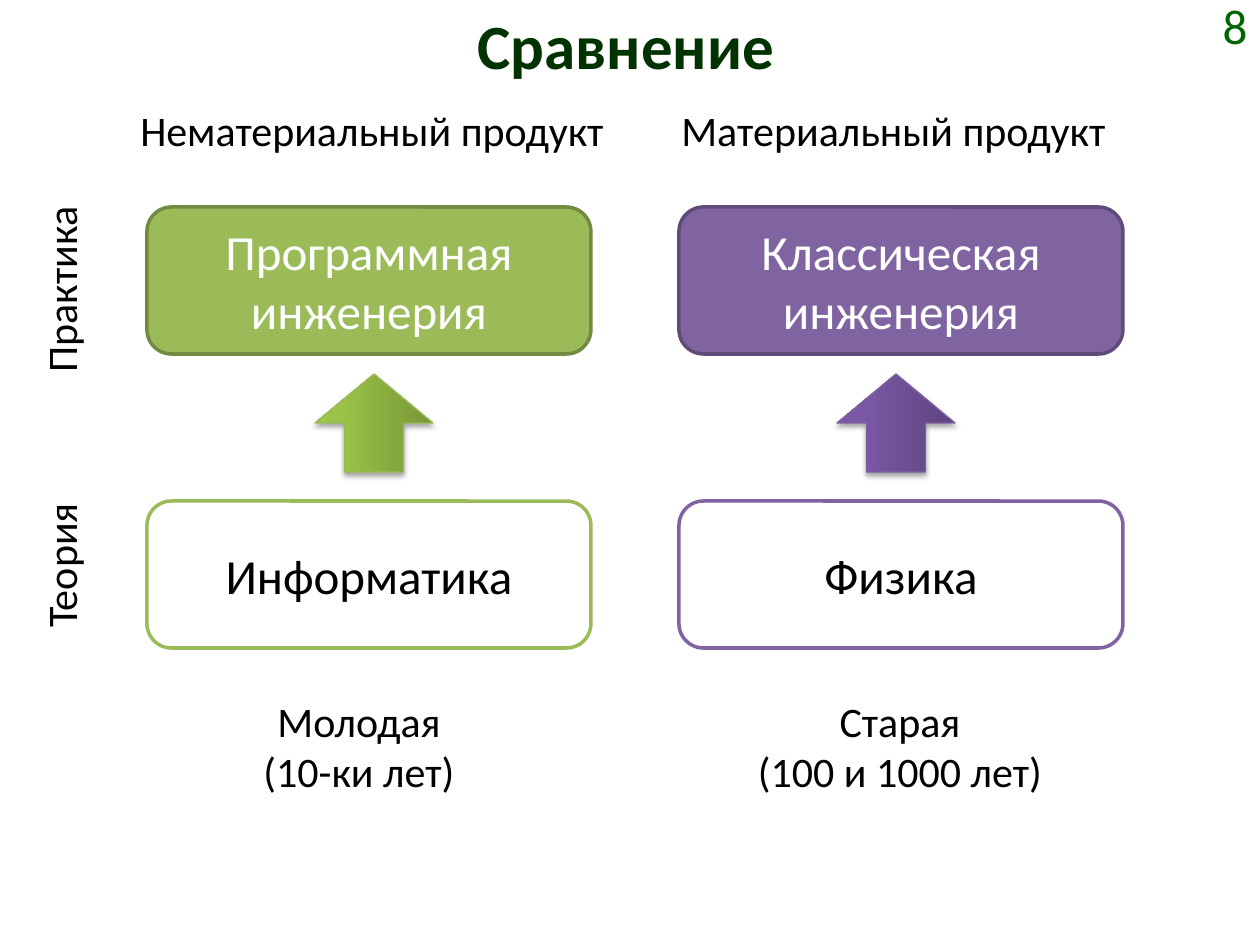
"""Builds a slide comparing software engineering with classical engineering."""
from lxml.etree import SubElement
from pptx import Presentation
from pptx.dml.color import RGBColor
from pptx.enum.shapes import MSO_SHAPE as SHAPE
from pptx.enum.text import MSO_ANCHOR as ANCHOR, MSO_AUTO_SIZE as AUTO, PP_ALIGN as ALIGN
from pptx.oxml.ns import qn
from pptx.util import Emu, Pt

TITLE, NUMBER = "Сравнение", "8"
COLORS = {"title": "003300", "number": "006600", "black": "000000", "white": "FFFFFF"}
COLUMNS = [
    {"header": "Нематериальный продукт", "header_w": 494,
     "practice": "Программная инженерия", "theory": "Информатика",
     "age": "Молодая\n(10-ки лет)", "text_x": 128, "box_x": 147, "arrow_x": 325,
     "fill": "9BBB59", "edge": "738A42", "arrow_edge": "98B955",
     "stops": [(0, "779737"), (80, "9BC348"), (100, "9DC746")]},
    {"header": "Материальный продукт", "header_w": 454,
     "practice": "Классическая инженерия", "theory": "Физика",
     "age": "Старая\n(100 и 1000 лет)", "text_x": 669, "box_x": 679, "arrow_x": 847,
     "fill": "8064A2", "edge": "5F4A78", "arrow_edge": "7D60A0",
     "stops": [(0, "5F4480"), (80, "7B58A6"), (100, "7C57A8")]},
]
ROWS = [("Практика", 186), ("Теория", 462)]
PRACTICE_Y, THEORY_Y, BOX_W, BOX_H = 207, 501, 444, 147


def px(*lengths):
    return [Emu(round(n * 914400 / 126)) for n in lengths]


def rgb(color):
    return RGBColor.from_string(color)


def write(tf, text, size=24, color=COLORS["black"], bold=False, align=ALIGN.CENTER,
          anchor=ANCHOR.TOP, before=0, wrap=True, auto=AUTO.NONE, inset=None):
    tf.word_wrap, tf.auto_size, tf.vertical_anchor = wrap, auto, anchor
    if inset is not None:
        tf.margin_left = tf.margin_top = tf.margin_right = tf.margin_bottom = inset
    p = tf.paragraphs[0]
    p.text, p.alignment, p.space_before = text, align, Pt(before)
    for r in p.runs:
        r.font.name, r.font.size, r.font.bold = "Calibri", Pt(size), bold
        r.font.color.rgb = rgb(color)


def add_label(s, box, text, vertical=False, **fmt):
    tf = s.shapes.add_textbox(*px(*box)).text_frame
    write(tf, text, **fmt)
    if vertical:
        tf._txBody.bodyPr.set("vert", "vert270")


def add_box(s, x, y, text, fill, edge, color):
    sp = s.shapes.add_shape(SHAPE.ROUNDED_RECTANGLE, *px(x, y, BOX_W, BOX_H))
    sp.shadow.inherit = False
    sp.fill.solid()
    sp.fill.fore_color.rgb = rgb(fill)
    sp.line.color.rgb, sp.line.width = rgb(edge), Pt(2)
    write(sp.text_frame, text, size=28, color=color, anchor=ANCHOR.MIDDLE, inset=0)


def add_arrow(s, x, stops, edge):
    sp = s.shapes.add_shape(SHAPE.RIGHT_ARROW, *px(x, 364, 98, 118))
    sp.rotation = 270
    sp.line.color.rgb, sp.line.width = rgb(edge), Pt(0.75)
    sp.fill.gradient()
    grad = sp._element.spPr.find(qn("a:gradFill"))
    grad.set("rotWithShape", "1")
    for child in list(grad):
        grad.remove(child)
    gs_list = SubElement(grad, qn("a:gsLst"))
    for pos, color in stops:
        gs = SubElement(gs_list, qn("a:gs"), pos=str(pos * 1000))
        SubElement(gs, qn("a:srgbClr"), val=color)
    SubElement(grad, qn("a:lin"), ang="16200000", scaled="0")
    sp.shadow.inherit = False
    effects = sp._element.spPr.find(qn("a:effectLst"))
    shadow = SubElement(effects, qn("a:outerShdw"), blurRad=str(Pt(3.1)), dist=str(Pt(1.8)),
                        dir="5400000", rotWithShape="0")
    black = SubElement(shadow, qn("a:srgbClr"), val=COLORS["black"])
    SubElement(black, qn("a:alpha"), val="35000")


def main():
    prs = Presentation()
    prs.slide_width, prs.slide_height = px(1260, 945)
    s = prs.slides.add_slide(prs.slide_layouts[5])
    title = s.shapes.title
    title.left, title.top, title.width, title.height = px(59, 0, 1134, 118)
    write(title.text_frame, TITLE, size=36, color=COLORS["title"], bold=True)
    add_label(s, (1131, 0, 129, 49), NUMBER, size=28, color=COLORS["number"],
              align=ALIGN.RIGHT, anchor=ANCHOR.MIDDLE)
    label = {"before": 12, "auto": AUTO.SHAPE_TO_FIT_TEXT}
    for col in COLUMNS:
        add_box(s, col["box_x"], PRACTICE_Y, col["practice"], col["fill"], col["edge"],
                COLORS["white"])
        add_box(s, col["box_x"], THEORY_Y, col["theory"], COLORS["white"], col["fill"],
                COLORS["black"])
        add_arrow(s, col["arrow_x"], col["stops"], col["arrow_edge"])
        add_label(s, (col["text_x"], 98, col["header_w"], 63), col["header"],
                  align=ALIGN.JUSTIFY, wrap=False, **label)
        add_label(s, (col["text_x"], 689, 462, 115), col["age"], **label)
    for text, y in ROWS:
        add_label(s, (29, y, 77, 207), text, vertical=True, **label)
    prs.save("out.pptx")


if __name__ == "__main__":
    main()
